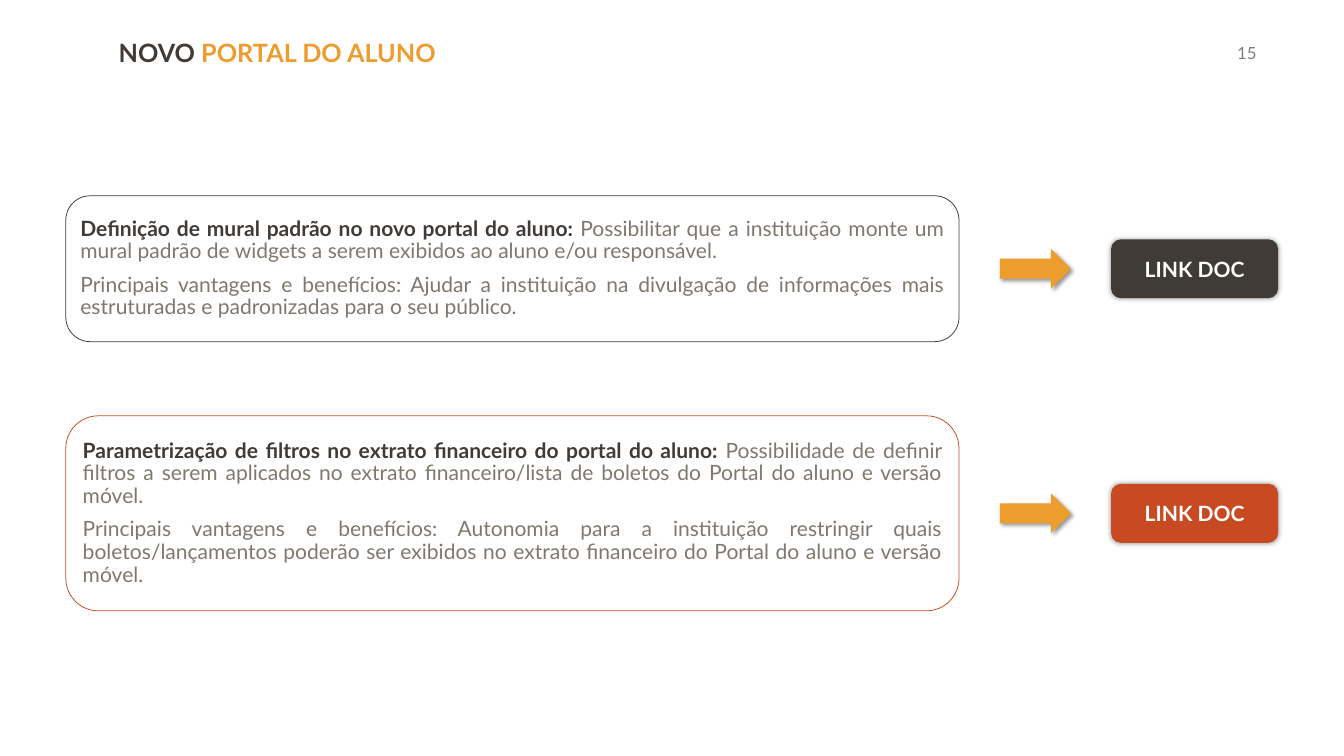
from dataclasses import dataclass

from lxml import etree
from pptx import Presentation
from pptx.dml.color import RGBColor
from pptx.enum.shapes import MSO_SHAPE
from pptx.enum.text import MSO_ANCHOR, PP_ALIGN
from pptx.oxml.ns import qn
from pptx.util import Inches, Pt

ROUNDED = MSO_SHAPE.ROUNDED_RECTANGLE
ARROW = MSO_SHAPE.RIGHT_ARROW
MIDDLE = MSO_ANCHOR.MIDDLE
JUSTIFY, CENTER = PP_ALIGN.JUSTIFY, PP_ALIGN.CENTER


@dataclass(frozen=True)
class Theme:
    font: str = "Lato"
    dark: str = "403B37"
    orange: str = "ED9C2E"
    red: str = "C84A23"
    body: str = "7F7870"
    white: str = "FFFFFF"
    title_size: int = 24
    body_size: int = 20
    number_size: int = 16


THEME = Theme()

# (accent, card top, card height, heading, description, benefits)
FEATURES = [
    (THEME.dark, 2.59, 1.93,
     "Definição de mural padrão no novo portal do aluno: ",
     "Possibilitar que a instituição monte um mural padrão de widgets a serem "
     "exibidos ao aluno e/ou responsável.",
     "Principais vantagens e benefícios: Ajudar a instituição na divulgação de "
     "informações mais estruturadas e padronizadas para o seu público."),
    (THEME.red, 5.5, 2.58,
     "Parametrização de filtros no extrato financeiro do portal do aluno: ",
     "Possibilidade de definir filtros a serem aplicados no extrato "
     "financeiro/lista de boletos do Portal do aluno e versão móvel.",
     "Principais vantagens e benefícios: Autonomia para a instituição restringir "
     "quais boletos/lançamentos poderão ser exibidos no extrato financeiro do "
     "Portal do aluno e versão móvel."),
]


def add_run(paragraph, text, size, color, bold=False):
    run = paragraph.add_run()
    run.text = text
    run.font.name = THEME.font
    run.font.size = Pt(size)
    run.font.bold = bold
    run.font.color.rgb = RGBColor.from_string(color)
    return run


def add_label(slide, left, top, width, height, wrap=True):
    label = slide.shapes.add_textbox(
        Inches(left), Inches(top), Inches(width), Inches(height))
    label.text_frame.word_wrap = wrap
    return label.text_frame.paragraphs[0]


def add_block(slide, kind, left, top, width, height, fill=None, line=None):
    block = slide.shapes.add_shape(
        kind, Inches(left), Inches(top), Inches(width), Inches(height))
    block.shadow.inherit = False
    if fill:
        block.fill.solid()
        block.fill.fore_color.rgb = RGBColor.from_string(fill)
    else:
        block.fill.background()
    if line:
        block.line.color.rgb = RGBColor.from_string(line)
        block.line.width = Pt(0.75)
    else:
        block.line.fill.background()
    block.text_frame.word_wrap = True
    block.text_frame.vertical_anchor = MIDDLE
    return block


def set_alpha(color_element, percent):
    alpha = etree.SubElement(color_element, qn("a:alpha"))
    alpha.set("val", str(percent * 1000))


def add_shadow(block, blur, distance=0, angle=0):
    effects = block._element.spPr.find(qn("a:effectLst"))
    shadow = etree.SubElement(effects, qn("a:outerShdw"))
    shadow.set("blurRad", str(Pt(blur)))
    shadow.set("dist", str(Pt(distance)))
    shadow.set("dir", str(angle * 60000))
    shadow.set("algn", "ctr")
    shadow.set("rotWithShape", "0")
    color = etree.SubElement(shadow, qn("a:srgbClr"))
    color.set("val", "000000")
    set_alpha(color, 40)


def add_card(slide, accent, top, height, heading, description, benefits):
    card = add_block(slide, ROUNDED, 0.87, top, 11.81, height, line=accent)
    summary = card.text_frame.paragraphs[0]
    advantages = card.text_frame.add_paragraph()
    advantages.space_before = Pt(10)
    for paragraph in (summary, advantages):
        paragraph.alignment = JUSTIFY
        paragraph.line_spacing = 0.9
    add_run(summary, heading, THEME.body_size, THEME.dark, bold=True)
    add_run(summary, description, THEME.body_size, THEME.body)
    add_run(advantages, benefits, THEME.body_size, THEME.body)


def add_arrow(slide, middle):
    height = 0.53
    arrow = add_block(slide, ARROW, 13.22, middle - height / 2, 0.94, height,
                      fill=THEME.orange)
    add_shadow(arrow, blur=4, distance=3, angle=45)


def add_button(slide, middle, accent):
    height = 0.78
    button = add_block(slide, ROUNDED, 14.69, middle - height / 2, 2.21, height,
                       fill=accent)
    add_shadow(button, blur=5)
    caption = button.text_frame.paragraphs[0]
    caption.alignment = CENTER
    add_run(caption, "LINK DOC", THEME.body_size, THEME.white, bold=True)


def main():
    prs = Presentation()
    prs.slide_width, prs.slide_height = Inches(17.77), Inches(10)
    slide = prs.slides.add_slide(prs.slide_layouts[6])

    # Page number, slightly transparent
    page = add_label(slide, 16.26, 0.52, 0.61, 0.37, wrap=False)
    number = add_run(page, "15", THEME.number_size, THEME.dark)
    set_alpha(number._r.rPr.find(".//" + qn("a:srgbClr")), 65)

    # Title
    title = add_label(slide, 1.47, 0.44, 14.36, 0.51)
    add_run(title, "NOVO ", THEME.title_size, THEME.dark, bold=True)
    add_run(title, "PORTAL DO ALUNO", THEME.title_size, THEME.orange, bold=True)

    # One row per feature: card, arrow and button on a shared middle line
    for accent, top, height, *texts in FEATURES:
        middle = top + height / 2
        add_card(slide, accent, top, height, *texts)
        add_arrow(slide, middle)
        add_button(slide, middle, accent)

    prs.save("out.pptx")


if __name__ == "__main__":
    main()
